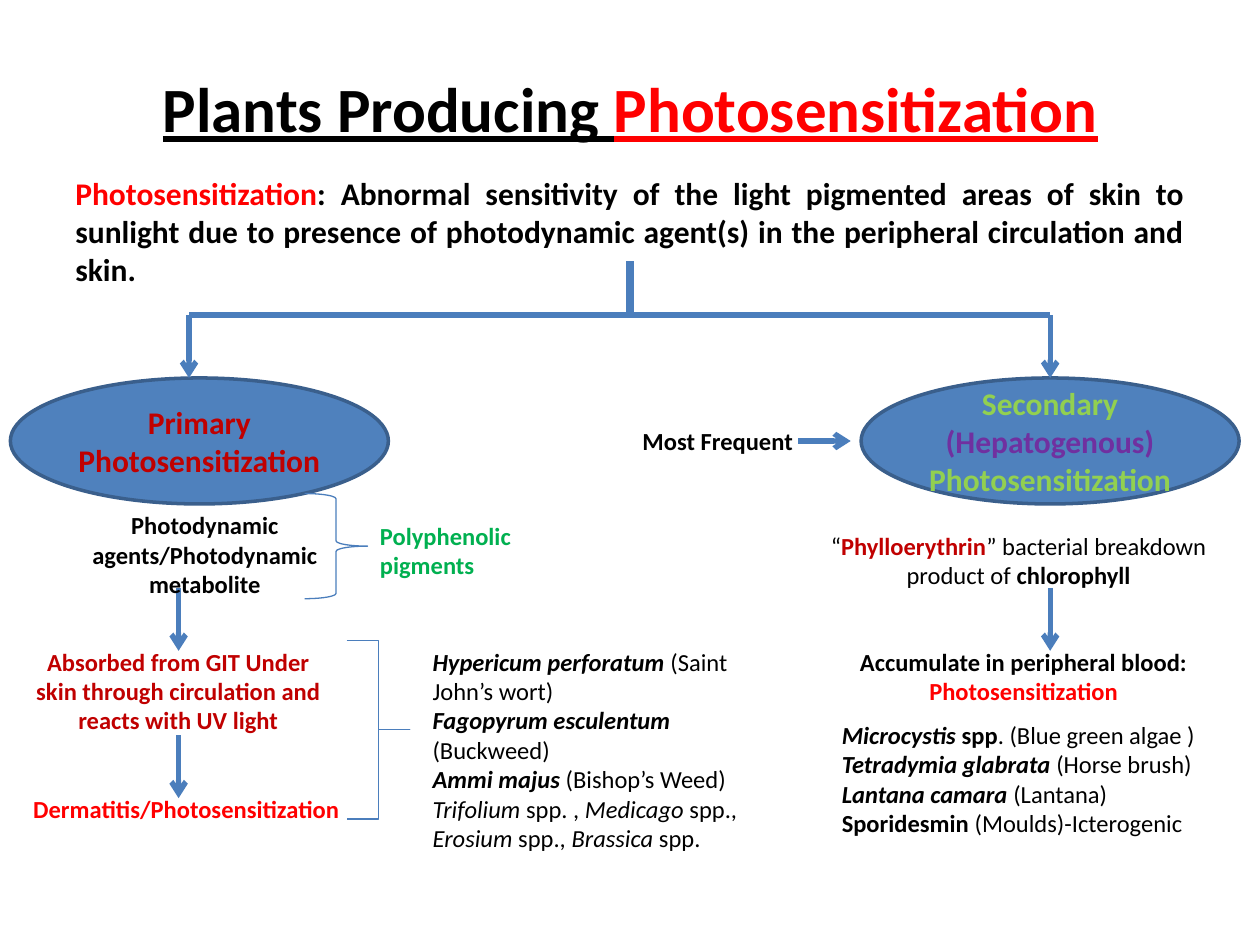
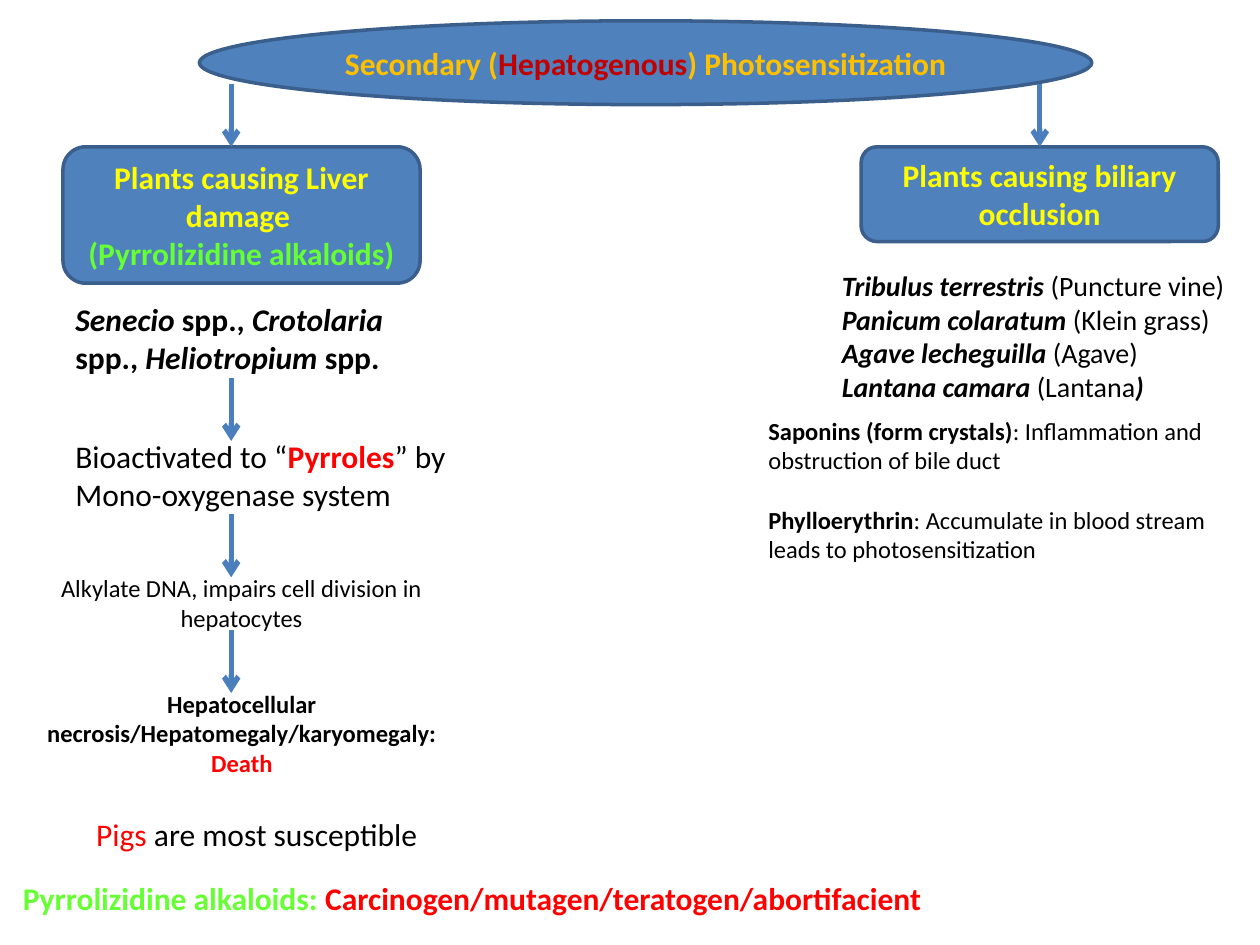
"""Build two slides on plants that cause primary and secondary photosensitization."""
from lxml import etree
from pptx import Presentation
from pptx.dml.color import RGBColor
from pptx.enum import shapes, text
from pptx.oxml import ns
from pptx.util import Cm, Pt

BLACK = RGBColor(0x00, 0x00, 0x00)
RED = RGBColor(0xFF, 0x00, 0x00)
DARK_RED = RGBColor(0xC0, 0x00, 0x00)
LIME = RGBColor(0x92, 0xD0, 0x50)
PURPLE = RGBColor(0x70, 0x30, 0xA0)
GREEN = RGBColor(0x00, 0xB0, 0x50)
NEON = RGBColor(0x66, 0xFF, 0x33)
YELLOW = RGBColor(0xFF, 0xFF, 0x00)
ORANGE = RGBColor(0xFF, 0xC0, 0x00)
BLUE = RGBColor(0x4F, 0x81, 0xBD)
EDGE = RGBColor(0x3A, 0x5F, 0x8C)
LINE = RGBColor(0x4B, 0x7E, 0xBC)

FONT = "Calibri"
STEP = 1.27
KIND = shapes.MSO_SHAPE
ALIGN = {"l": text.PP_ALIGN.LEFT, "c": text.PP_ALIGN.CENTER, "j": text.PP_ALIGN.JUSTIFY}

TITLE = [[("Plants Producing ", "bu"), ("Photosensitization", "bu", RED)]]
LEFT, RIGHT, MIDDLE = 3.81, 21.17, 12.7

# Nodes: kind, box, paragraphs. Texts: box, size, alignment, paragraphs.
# Runs: text, style letters, colour. Arrows: x, top.
OVERVIEW = {
    "nodes": [
        (KIND.OVAL, (0.21, 7.62, 7.62, 2.54),
         [[("Primary Photosensitization", "b", DARK_RED)]]),
        (KIND.OVAL, (17.36, 7.62, 7.62, 2.54),
         [[("Secondary ", "b", LIME), ("(Hepatogenous) ", "b", PURPLE),
           ("Photosensitization", "b", LIME)]]),
    ],
    "braces": [((6.14, 9.95, 1.27, 2.12), 0.0833), ((6.99, 12.91, 1.27, 3.6), 0)],
    "lines": [((MIDDLE, 5.27, MIDDLE, 6.35), 4.5), ((LEFT, 6.35, RIGHT, 6.35), 3)],
    "arrows": [(LEFT, 6.35), (RIGHT, 6.35), (3.6, 11.85), (3.6, 14.82), (RIGHT, 11.85)],
    "side_arrows": [(16.09, 8.89, 17.15, 8.89)],
    "texts": [
        ((1.27, 3.39, 22.86, 2.57), 18, "j", [[
            ("Photosensitization", "b", RED),
            (": Abnormal sensitivity of the light pigmented areas of skin to sunlight due to "
             "presence of photodynamic agent(s) in the peripheral circulation and skin.", "b")]]),
        ((0.85, 10.16, 6.56, 2.06), 14, "c",
         [[("Photodynamic agents/Photodynamic metabolite", "b")]]),
        ((0.42, 12.91, 6.35, 2.06), 14, "c",
         [[("Absorbed from GIT Under skin through circulation and reacts with UV light",
            "b", DARK_RED)]]),
        ((7.41, 10.37, 3.39, 1.45), 14, "l", [[("Polyphenolic pigments", "b", GREEN)]]),
        ((0.42, 15.88, 7.41, 0.86), 14, "l", [[("Dermatitis/Photosensitization", "b", RED)]]),
        ((12.7, 8.47, 3.81, 0.85), 14, "l", [[("Most Frequent", "b")]]),
        ((16.09, 10.58, 8.89, 1.45), 14, "c",
         [[("“", ""), ("Phylloerythrin", "b", DARK_RED),
           ("” bacterial breakdown product of ", ""), ("chlorophyll", "b")]]),
        ((16.72, 12.91, 7.83, 1.45), 14, "c",
         [[("Accumulate in peripheral blood: ", "b"), ("Photosensitization", "b", RED)]]),
        ((8.47, 12.91, 6.77, 4.45), 14, "l", [
            [("Hypericum perforatum ", "bi"), ("(Saint John’s wort)", "")],
            [("Fagopyrum esculentum ", "bi"), ("(Buckweed)", "")],
            [("Ammi majus ", "bi"), ("(Bishop’s Weed)", "")],
            [("Trifolium", "i"), (" spp. , ", ""), ("Medicago", "i"), (" spp., ", ""),
             ("Erosium ", "i"), ("spp., ", ""), ("Brassica ", "i"), ("spp.", "")]]),
        ((16.72, 14.39, 8.04, 2.64), 14, "l", [
            [("Microcystis ", "bi"), ("spp", "b"), (". (Blue green algae )", "")],
            [("Tetradymia glabrata ", "bi"), ("(Horse brush)", "")],
            [("Lantana camara ", "bi"), ("(Lantana)", "")],
            [("Sporidesmin ", "b"), ("(Moulds)-Icterogenic", "")]]),
    ],
}

CHAIN = 4.66
SECONDARY = {
    "nodes": [
        (KIND.ROUNDED_RECTANGLE, (1.27, 2.96, 7.2, 2.75),
         [[("Plants causing Liver damage ", "b", YELLOW)],
          [("(Pyrrolizidine alkaloids)", "b", NEON)]]),
        (KIND.OVAL, (4.02, 0.42, 17.99, 1.69),
         [[("Secondary (", "b", ORANGE), ("Hepatogenous", "b", DARK_RED),
           (") Photosensitization", "b", ORANGE)]]),
        (KIND.ROUNDED_RECTANGLE, (17.36, 2.96, 7.2, 1.91),
         [[("Plants causing biliary occlusion", "b", YELLOW)]]),
    ],
    "braces": [],
    "lines": [],
    "arrows": [(CHAIN, 1.69), (20.96, 1.69), (CHAIN, 7.62), (CHAIN, 10.37), (CHAIN, 12.7)],
    "side_arrows": [],
    "texts": [
        ((1.27, 5.93, 7.62, 1.8), 18, "l",
         [[("Senecio", "bi"), (" spp., ", "b"), ("Crotolaria", "bi"), (" spp., ", "b"),
           ("Heliotropium", "bi"), (" spp.", "b")]]),
        ((1.27, 8.68, 8.04, 1.8), 18, "l",
         [[("Bioactivated to “", ""), ("Pyrroles", "b", RED),
           ("” by Mono-oxygenase system", "")]]),
        ((0.85, 11.43, 8.04, 1.45), 14, "c",
         [[("Alkylate DNA, impairs cell division in hepatocytes", "")]]),
        ((0.64, 13.76, 8.47, 2.06), 14, "c",
         [[("Hepatocellular necrosis/Hepatomegaly/karyomegaly: ", "b"), ("Death", "b", RED)]]),
        ((1.69, 16.3, 7.2, 1.02), 18, "l",
         [[("Pigs", "", RED), (" are most susceptible", "")]]),
        ((0.21, 17.6, 18.75, 1.02), 18, "l",
         [[("Pyrrolizidine alkaloids: ", "b", NEON),
           ("Carcinogen/mutagen/teratogen/abortifacient", "b", RED)]]),
        ((15.24, 8.26, 10.16, 3.25), 14, "l", [
            [("Saponins (form crystals)", "b"),
             (": Inflammation and obstruction of bile duct", "")],
            [("Phylloerythrin", "b"),
             (": Accumulate in blood stream leads to photosensitization", "")]], 17),
        ((16.72, 5.29, 8.26, 3), 16, "l", [
            [("Tribulus terrestris ", "bi"), ("(Puncture vine)", "")],
            [("Panicum colaratum ", "bi"), ("(Klein grass)", "")],
            [("Agave lecheguilla ", "bi"), ("(Agave)", "")],
            [("Lantana camara", "bi"), (" (Lantana", ""), (")", "bi")]]),
    ],
}


def lengths(box):
    return [Cm(v) for v in box]


def write(tf, paragraphs, size, align, gap=0):
    tf.word_wrap = True
    for n, runs in enumerate(paragraphs):
        p = tf.add_paragraph() if n else tf.paragraphs[0]
        p.alignment = ALIGN[align]
        if n and gap:
            p.space_before = Pt(gap)
        for content, style, *colour in runs:
            r = p.add_run()
            r.text = content
            f = r.font
            f.name, f.size = FONT, Pt(size)
            f.bold, f.italic, f.underline = ("b" in style, "i" in style, "u" in style)
            f.color.rgb = colour[0] if colour else BLACK


def add_node(s, kind, box, paragraphs):
    sp = s.shapes.add_shape(kind, *lengths(box))
    sp.shadow.inherit = False
    sp.fill.solid()
    sp.fill.fore_color.rgb = BLUE
    sp.line.color.rgb = EDGE
    sp.line.width = Pt(2)
    sp.text_frame.vertical_anchor = text.MSO_ANCHOR.MIDDLE
    write(sp.text_frame, paragraphs, 18, "c")


def add_brace(s, box, curve):
    sp = s.shapes.add_shape(KIND.RIGHT_BRACE, *lengths(box))
    sp.shadow.inherit = False
    sp.adjustments[0] = curve
    sp.fill.background()
    sp.line.color.rgb = LINE
    sp.line.width = Pt(0.75)


def add_line(s, ends, width=3, arrow=False):
    c = s.shapes.add_connector(shapes.MSO_CONNECTOR.STRAIGHT, *lengths(ends))
    c.line.color.rgb = LINE
    c.line.width = Pt(width)
    if arrow:
        etree.SubElement(c.line._get_or_add_ln(), ns.qn("a:tailEnd"), type="arrow")
    etree.SubElement(c._element.spPr, ns.qn("a:effectLst"))


def add_text(s, box, size, align, paragraphs, gap=0):
    tf = s.shapes.add_textbox(*lengths(box)).text_frame
    write(tf, paragraphs, size, align, gap)
    tf.auto_size = text.MSO_AUTO_SIZE.SHAPE_TO_FIT_TEXT


def fill_slide(s, content):
    for node in content["nodes"]:
        add_node(s, *node)
    for line in content["lines"]:
        add_line(s, *line)
    for x, top in content["arrows"]:
        add_line(s, (x, top, x, top + STEP), arrow=True)
    for ends in content["side_arrows"]:
        add_line(s, ends, arrow=True)
    for brace in content["braces"]:
        add_brace(s, *brace)
    for item in content["texts"]:
        add_text(s, *item)


def main():
    prs = Presentation()
    prs.slide_width, prs.slide_height = Cm(25.4), Cm(19.05)

    s = prs.slides.add_slide(prs.slide_layouts[5])
    title = s.shapes.title
    title.left, title.top, title.width, title.height = lengths((2.12, 1.27, 21.17, 1.8))
    write(title.text_frame, TITLE, 36, "c")
    fill_slide(s, OVERVIEW)

    fill_slide(prs.slides.add_slide(prs.slide_layouts[6]), SECONDARY)
    prs.save("out.pptx")


if __name__ == "__main__":
    main()
